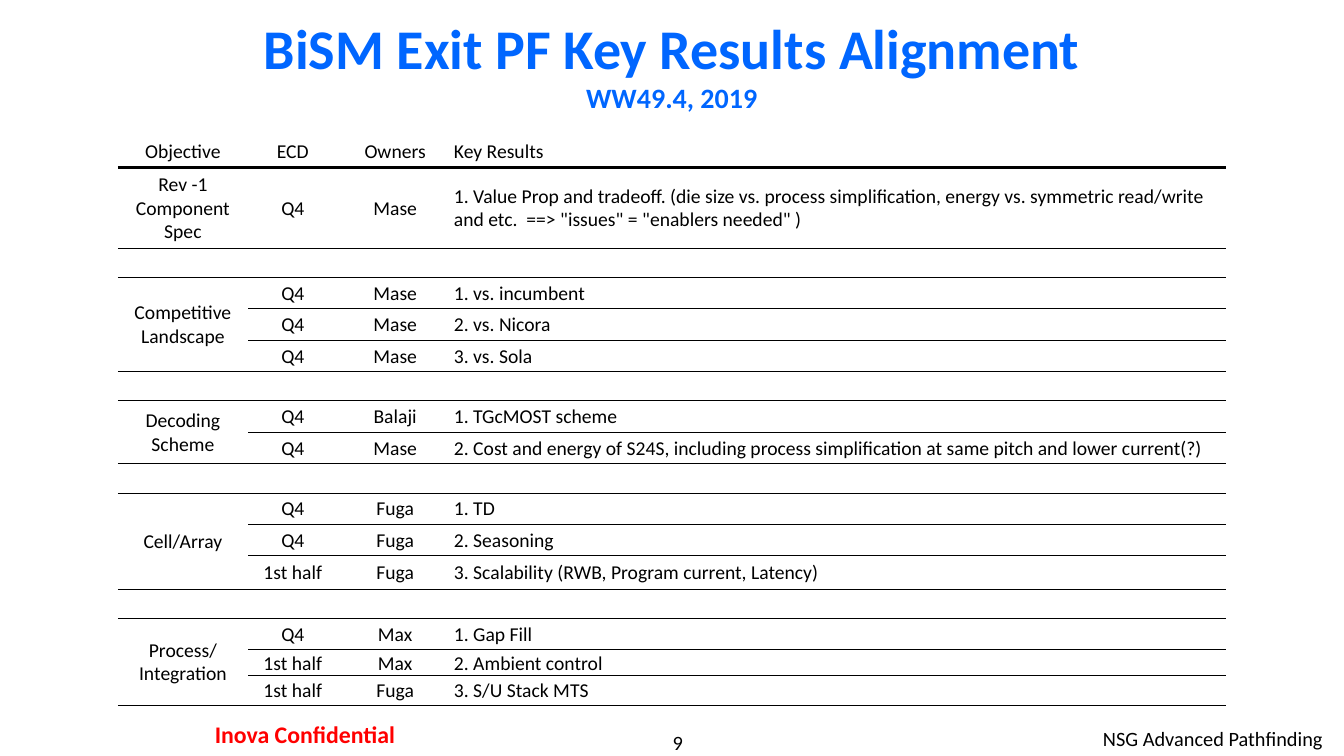
from dataclasses import dataclass

from lxml import etree
from pptx import Presentation
from pptx.dml.color import RGBColor
from pptx.enum.text import MSO_ANCHOR, MSO_AUTO_SIZE, PP_ALIGN
from pptx.oxml.ns import qn
from pptx.slide import Slide
from pptx.table import Table, _Cell
from pptx.text.text import _Paragraph
from pptx.util import Cm, Pt

LEFT, CENTER, RIGHT = PP_ALIGN.LEFT, PP_ALIGN.CENTER, PP_ALIGN.RIGHT
MIDDLE = MSO_ANCHOR.MIDDLE
NO_FIT = MSO_AUTO_SIZE.NONE

FONT = "Calibri"
COLORS = {"title": "0066FF", "text": "000000", "alert": "FF0000", "paper": "FFFFFF"}
HEADINGS = ("Objective", "ECD", "Owners", "Key Results")
COLUMN_WIDTHS = (3.28, 2.26, 2.9, 19.48)
HEADER_HEIGHT, SPACER_HEIGHT = 0.84, 0.74
TABLE_SIZE, THIN, THICK = 14, 0.5, 2


@dataclass
class Result:
    due: str
    owner: str
    text: str
    height: float = 0.79


@dataclass
class Objective:
    name: str
    results: list[Result]


@dataclass
class Footer:
    text: str
    left: float
    top: float
    width: float
    height: float
    align: PP_ALIGN
    margins: tuple[float, float]
    size: float = 14.5
    color: str = "text"
    bold: bool = False


OBJECTIVES = [
    Objective("Rev -1 Component Spec", [
        Result("Q4", "Mase", "1. Value Prop and tradeoff. (die size vs. process simplification, "
               "energy vs. symmetric read/write and etc.  ==> \"issues\" = \"enablers needed\" )", 2.03),
    ]),
    Objective("Competitive Landscape", [
        Result("Q4", "Mase", "1. vs. incumbent"),
        Result("Q4", "Mase", "2. vs. Nicora"),
        Result("Q4", "Mase", "3. vs. Sola"),
    ]),
    Objective("Decoding Scheme", [
        Result("Q4", "Balaji", "1. TGcMOST scheme"),
        Result("Q4", "Mase", "2. Cost and energy of S24S, including process simplification "
               "at same pitch and lower current(?)"),
    ]),
    Objective("Cell/Array", [
        Result("Q4", "Fuga", "1. TD"),
        Result("Q4", "Fuga", "2. Seasoning"),
        Result("1st half", "Fuga", "3. Scalability (RWB, Program current, Latency)", 0.84),
    ]),
    Objective("Process/ Integration", [
        Result("Q4", "Max", "1. Gap Fill"),
        Result("1st half", "Max", "2. Ambient control", 0.66),
        Result("1st half", "Fuga", "3. S/U Stack MTS", 0.74),
    ]),
]

FOOTERS = [
    Footer("9", 14.12, 18.39, 5.92, 0.61, CENTER, (0, 0)),
    Footer("NSG Advanced Pathfinding", 22.43, 18.16, 11.15, 0.89, RIGHT, (0.25, 0.13)),
    Footer("Inova Confidential", 3.94, 17.98, 7.49, 1.04, CENTER, (0.3, 0.15), 17, "alert", True),
]


def style(para: _Paragraph, size: float, color: str, align: PP_ALIGN, bold: bool = False) -> None:
    para.alignment = align
    para.font.name = FONT
    para.font.size = Pt(size)
    para.font.bold = bold
    para.font.color.rgb = RGBColor.from_string(COLORS[color])


def set_borders(cell: _Cell, top: float, bottom: float) -> None:
    """Rule a cell above and below; a width of 0 means no line."""
    properties = cell._tc.get_or_add_tcPr()
    for side, width in (("L", 0), ("R", 0), ("T", top), ("B", bottom)):
        line = etree.SubElement(properties, qn(f"a:ln{side}"), w=str(Pt(width)))
        if width:
            fill = etree.SubElement(line, qn("a:solidFill"))
            etree.SubElement(fill, qn("a:srgbClr"), val=COLORS["text"])
        else:
            etree.SubElement(line, qn("a:noFill"))


def format_cell(cell: _Cell, row: int, column: int) -> None:
    if not cell.is_spanned:
        top = (0, THICK)[row] if row < 2 else THIN
        set_borders(cell, top, THIN if row else THICK)
    cell.fill.solid()
    cell.fill.fore_color.rgb = RGBColor.from_string(COLORS["paper"])
    cell.vertical_anchor = MIDDLE
    cell.margin_left = cell.margin_right = cell.margin_top = Cm(0.03)
    cell.margin_bottom = 0
    para = cell.text_frame.paragraphs[0]
    style(para, TABLE_SIZE, "text", LEFT if column == 3 else CENTER)
    if not para.text:
        # Empty cells need their own text size, or the row grows
        etree.SubElement(para._p, qn("a:endParaRPr"), sz=str(TABLE_SIZE * 100))


def fill_row(table: Table, row: int, height: float, texts: tuple[str, ...]) -> None:
    table.rows[row].height = Cm(height)
    for column, text in enumerate(texts):
        if text:
            table.cell(row, column).text = text


def add_results_table(page: Slide) -> None:
    row_count = sum(len(objective.results) + 1 for objective in OBJECTIVES)
    frame = page.shapes.add_table(row_count, len(HEADINGS), Cm(2.97), Cm(3.38),
                                  Cm(sum(COLUMN_WIDTHS)), Cm(14.4))
    table = frame.table
    table.first_row = table.horz_banding = False
    for column, width in zip(table.columns, COLUMN_WIDTHS):
        column.width = Cm(width)

    # Header, then each objective with a spacer row between
    fill_row(table, 0, HEADER_HEIGHT, HEADINGS)
    row = 1
    for objective in OBJECTIVES:
        if row > 1:
            fill_row(table, row, SPACER_HEIGHT, ())
            row += 1
        first = row
        for result in objective.results:
            name = objective.name if row == first else ""
            fill_row(table, row, result.height, (name, result.due, result.owner, result.text))
            row += 1
        if row - first > 1:
            table.cell(first, 0).merge(table.cell(row - 1, 0))

    for row in range(row_count):
        for column in range(len(HEADINGS)):
            format_cell(table.cell(row, column), row, column)


def add_title(page: Slide) -> None:
    title = page.shapes.title
    title.left, title.top, title.width, title.height = Cm(2.54), Cm(0.43), Cm(28.78), Cm(2.34)
    frame = title.text_frame
    frame.auto_size = NO_FIT
    frame.vertical_anchor = MIDDLE
    para = frame.paragraphs[0]
    style(para, 40, "title", CENTER, True)
    para.add_run().text = "BiSM Exit PF Key Results Alignment"
    para.add_line_break()
    date = para.add_run()
    date.text = "WW49.4, 2019"
    date.font.size = Pt(20)


def add_footer(page: Slide, footer: Footer) -> None:
    box = page.shapes.add_textbox(Cm(footer.left), Cm(footer.top), Cm(footer.width), Cm(footer.height))
    frame = box.text_frame
    frame.word_wrap = True
    frame.margin_left = frame.margin_right = Cm(footer.margins[0])
    frame.margin_top = frame.margin_bottom = Cm(footer.margins[1])
    frame.text = footer.text
    style(frame.paragraphs[0], footer.size, footer.color, footer.align, footer.bold)


def main() -> None:
    deck = Presentation()
    deck.slide_width, deck.slide_height = Cm(33.87), Cm(19.05)
    page = deck.slides.add_slide(deck.slide_layouts[5])
    for footer in FOOTERS:
        add_footer(page, footer)
    add_title(page)
    add_results_table(page)
    deck.save("out.pptx")


if __name__ == "__main__":
    main()
